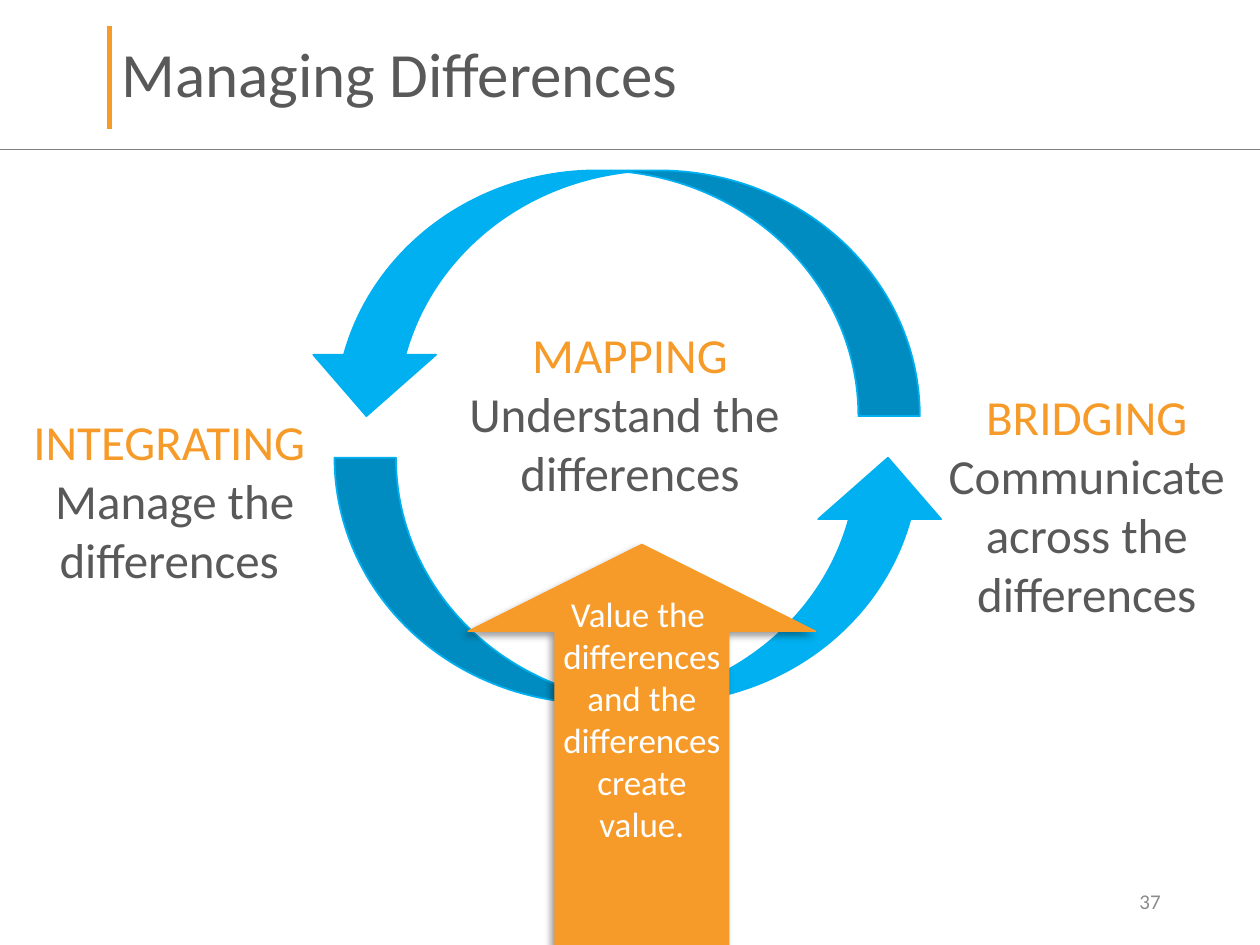
from dataclasses import dataclass

from lxml import etree
from pptx import Presentation
from pptx.dml.color import RGBColor
from pptx.enum.shapes import MSO_CONNECTOR, MSO_SHAPE
from pptx.enum.text import MSO_ANCHOR, PP_ALIGN
from pptx.oxml.ns import qn
from pptx.shapes.autoshape import Shape
from pptx.slide import Slide
from pptx.util import Inches, Pt

STRAIGHT = MSO_CONNECTOR.STRAIGHT
CURVED_ARROW, UP_ARROW = MSO_SHAPE.CURVED_UP_ARROW, MSO_SHAPE.UP_ARROW
TOP, MIDDLE = MSO_ANCHOR.TOP, MSO_ANCHOR.MIDDLE
LEFT, CENTER, RIGHT = PP_ALIGN.LEFT, PP_ALIGN.CENTER, PP_ALIGN.RIGHT

ORANGE = RGBColor(0xF6, 0x9B, 0x29)
BLUE = RGBColor(0x00, 0xB0, 0xF0)
DARK_GREY = RGBColor(0x59, 0x59, 0x59)
RULE_GREY = RGBColor(0x7F, 0x7F, 0x7F)
NUMBER_GREY = RGBColor(0x8C, 0x8C, 0x8C)
WHITE = RGBColor(0xFF, 0xFF, 0xFF)

FONT = "Calibri"
COLUMNS, ROWS = 200, 150
CELL = Inches(10) // COLUMNS
NARROW = Inches(0.04)
NARROW_MARGINS = {f"margin_{side}": NARROW for side in ("left", "top", "right", "bottom")}


@dataclass(frozen=True)
class Area:
    column: float
    row: float
    columns: float
    rows: float

    def lengths(self) -> list[int]:
        return [round(cells * CELL) for cells in (self.column, self.row, self.columns, self.rows)]


@dataclass(frozen=True)
class Run:
    text: str
    color: RGBColor


@dataclass(frozen=True)
class Label:
    area: Area
    paragraphs: list[list[Run]]
    size: int = 28


@dataclass(frozen=True)
class Arrow:
    area: Area
    kind: MSO_SHAPE
    color: RGBColor
    line_width: float
    rotation: int = 0


@dataclass(frozen=True)
class Rule:
    start: tuple[float, float]
    end: tuple[float, float]
    color: RGBColor
    width: float


RULES = [
    Rule((17.4, 4.2), (17.4, 20.45), ORANGE, 3),
    Rule((0, 23.8), (COLUMNS, 23.8), RULE_GREY, 0.5),
]
TITLE = Label(Area(17.3, 4.1, 172.2, 16.2), [[Run("Managing Differences", DARK_GREY)]], 36)
PAGE_NUMBER = Label(Area(141.2, 139, 45, 8), [[Run("37", NUMBER_GREY)]], 12)
STEPS = [
    Label(Area(148.8, 60.55, 47.4, 11), [
        [Run("BRIDGING", ORANGE)],
        [Run("Communicate across the differences", DARK_GREY)],
    ]),
    Label(Area(3.75, 64.6, 46.2, 50), [
        [Run("INTEGRATING", ORANGE)],
        [Run(" Manage the differences", DARK_GREY)],
    ]),
    Label(Area(67.6, 50.75, 64.8, 14.2), [
        [Run("MAPPING\v", ORANGE), Run("Understand the \vdifferences", DARK_GREY)],
    ]),
]
CYCLE = [
    Arrow(Area(48.4, 27.05, 97.6, 39), CURVED_ARROW, BLUE, 1, 180),
    Arrow(Area(53.1, 72.65, 97.6, 39), CURVED_ARROW, BLUE, 1),
]
VALUE_ARROW = Arrow(Area(74.3, 86.4, 55.2, 63.6), UP_ARROW, ORANGE, 0.75)
VALUE_TEXT = Label(VALUE_ARROW.area, [
    [Run("Value the \vdifferences and the differences create value.", WHITE)],
], 20)


def set_attributes(target: object, values: dict) -> None:
    for name, value in values.items():
        setattr(target, name, value)


def write_text(shape: Shape, label: Label, frame_format: dict, paragraph_format: dict) -> None:
    frame = shape.text_frame
    set_attributes(frame, {"word_wrap": True, **frame_format})
    for index, runs in enumerate(label.paragraphs):
        paragraph = frame.add_paragraph() if index else frame.paragraphs[0]
        set_attributes(paragraph, paragraph_format)
        set_attributes(paragraph.font, {"name": FONT, "size": Pt(label.size)})
        for part in runs:
            for position, piece in enumerate(part.text.split("\v")):
                if position:
                    paragraph.add_line_break()
                if piece:
                    run = paragraph.add_run()
                    run.text = piece
                    set_attributes(run.font, {"name": FONT, "size": Pt(label.size)})
                    run.font.color.rgb = part.color


def draw_label(slide: Slide, label: Label, frame_format: dict, paragraph_format: dict) -> None:
    shape = slide.shapes.add_textbox(*label.area.lengths())
    write_text(shape, label, frame_format, paragraph_format)


def draw_arrow(slide: Slide, arrow: Arrow) -> Shape:
    shape = slide.shapes.add_shape(arrow.kind, *arrow.area.lengths())
    shape.rotation = arrow.rotation
    shape.shadow.inherit = False
    shape.fill.solid()
    shape.fill.fore_color.rgb = arrow.color
    shape.line.color.rgb = arrow.color
    shape.line.width = Pt(arrow.line_width)
    return shape


def draw_rule(slide: Slide, rule: Rule) -> None:
    ends = [round(cells * CELL) for cells in (*rule.start, *rule.end)]
    connector = slide.shapes.add_connector(STRAIGHT, *ends)
    connector.line.color.rgb = rule.color
    connector.line.width = Pt(rule.width)
    etree.SubElement(connector._element.spPr, qn("a:effectLst"))


def add_shadow(shape: Shape) -> None:
    effects = shape._element.spPr.find(qn("a:effectLst"))
    shadow = etree.SubElement(effects, qn("a:outerShdw"), {
        "blurRad": str(Pt(4)), "dist": str(Pt(3)), "dir": str(135 * 60000), "rotWithShape": "0",
    })
    color = etree.SubElement(shadow, qn("a:srgbClr"), {"val": "000000"})
    etree.SubElement(color, qn("a:alpha"), {"val": "40000"})


def main() -> None:
    presentation = Presentation()
    presentation.slide_width = COLUMNS * CELL
    presentation.slide_height = ROWS * CELL
    slide = presentation.slides.add_slide(presentation.slide_layouts[6])

    centered = {"alignment": CENTER}
    top_frame = {"vertical_anchor": TOP, **NARROW_MARGINS}
    middle_frame = {"vertical_anchor": MIDDLE}

    draw_label(slide, PAGE_NUMBER, middle_frame, {"alignment": RIGHT})
    for rule in RULES:
        draw_rule(slide, rule)
    draw_label(slide, TITLE, middle_frame, {"alignment": LEFT, "line_spacing": 0.9})
    for arrow in CYCLE:
        draw_arrow(slide, arrow)
    for step in STEPS:
        draw_label(slide, step, top_frame, centered)

    value_arrow = draw_arrow(slide, VALUE_ARROW)
    value_arrow.adjustments[0] = 0.5
    value_arrow.adjustments[1] = 0.25
    add_shadow(value_arrow)
    write_text(value_arrow, VALUE_TEXT, top_frame, centered)

    presentation.save("out.pptx")


if __name__ == "__main__":
    main()
